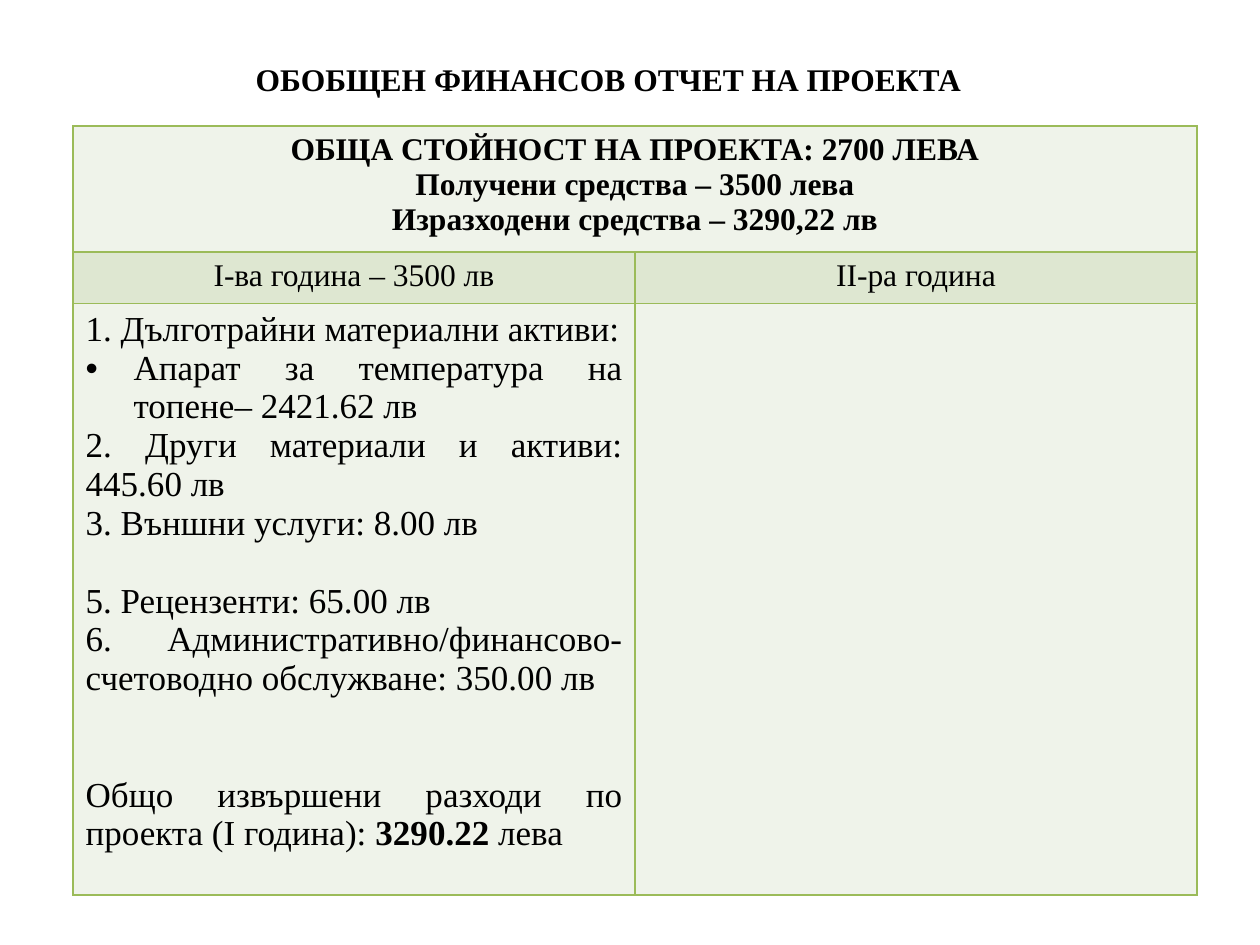
from lxml.etree import SubElement
from pptx import Presentation
from pptx.dml.color import RGBColor
from pptx.enum.text import MSO_ANCHOR, PP_ALIGN
from pptx.oxml.ns import qn
from pptx.util import Inches, Pt

FONT = "Times New Roman"
BLACK, GREEN, PALE, SAGE = "000000", "9BBB59", "EFF3EA", "DEE7D1"
BLANK_LINE = 22.15

TITLE = "ОБОБЩЕН ФИНАНСОВ ОТЧЕТ НА ПРОЕКТА"
TOTALS = [
    "ОБЩА СТОЙНОСТ НА ПРОЕКТА: 2700 ЛЕВА",
    "Получени средства – 3500 лева",
    "Изразходени средства – 3290,22 лв",
]
YEARS = ["I-ва година – 3500 лв", "II-ра година"]
EXPENSES = [
    "1. Дълготрайни материални активи:",
    "Апарат за температура на топене– 2421.62 лв",
    "2. Други материали и активи: 445.60 лв",
    "3. Външни услуги: 8.00 лв",
    "5. Рецензенти: 65.00 лв",
    "6. Административно/финансово-счетоводно обслужване: 350.00 лв",
    "Общо извършени разходи по проекта (I година): ",
]
EQUIPMENT, REVIEWERS, SUM = 1, 4, 6


def color(value):
    return RGBColor.from_string(value)


class ReportPage:
    def __init__(self, deck):
        self.page = deck.slides.add_slide(deck.slide_layouts[6])

    def style(self, span, size, bold=False):
        span.font.name = FONT
        span.font.size = Pt(size)
        span.font.bold = bold
        span.font.color.rgb = color(BLACK)

    def set_lines(self, frame, lines, size, align, bold=False):
        frame.text = "\n".join(lines)
        for para in frame.paragraphs:
            para.alignment = align
            for span in para.runs:
                self.style(span, size, bold)

    def title(self, text, left, top, width, height):
        box = self.page.shapes.add_textbox(
            Inches(left), Inches(top), Inches(width), Inches(height))
        frame = box.text_frame
        frame.word_wrap = True
        frame.vertical_anchor = MSO_ANCHOR.MIDDLE
        self.set_lines(frame, [text], 18, PP_ALIGN.CENTER, bold=True)

    def table(self, left, top, column_widths, row_heights, fills):
        shape = self.page.shapes.add_table(
            len(row_heights), len(column_widths), Inches(left), Inches(top),
            Inches(sum(column_widths)), Inches(sum(row_heights)))
        table = shape.table
        for column, width in zip(table.columns, column_widths):
            column.width = Inches(width)
        for row, height, fill in zip(table.rows, row_heights, fills):
            row.height = Inches(height)
            for cell in row.cells:
                self.border(cell)
                cell.fill.solid()
                cell.fill.fore_color.rgb = color(fill)
        return table

    def border(self, cell):
        properties = cell._tc.get_or_add_tcPr()
        for side in ("a:lnL", "a:lnR", "a:lnT", "a:lnB"):
            line = SubElement(properties, qn(side), w=str(Pt(1)))
            fill = SubElement(line, qn("a:solidFill"))
            SubElement(fill, qn("a:srgbClr"), val=GREEN)

    def bullet(self, para, indent):
        """Give the paragraph a round bullet with a hanging indent."""
        properties = para._p.get_or_add_pPr()
        properties.set("marL", str(Inches(indent)))
        properties.set("indent", str(-Inches(indent)))
        SubElement(properties, qn("a:buFont"), typeface="Arial")
        SubElement(properties, qn("a:buChar"), char="•")


def main():
    deck = Presentation()
    deck.slide_width, deck.slide_height = Inches(10), Inches(7.5)
    report = ReportPage(deck)
    report.title(TITLE, 0.58, 0.25, 8.5, 0.75)

    table = report.table(0.58, 1, [4.46] * 2, [0.93, 0.41, 4.69],
                         [PALE, SAGE, PALE])
    totals = table.cell(0, 0)
    totals.merge(table.cell(0, 1))
    report.set_lines(totals.text_frame, TOTALS, 18, PP_ALIGN.CENTER, bold=True)
    for column, year in enumerate(YEARS):
        report.set_lines(table.cell(1, column).text_frame, [year], 18,
                         PP_ALIGN.CENTER)

    expenses = table.cell(2, 0).text_frame
    report.set_lines(expenses, EXPENSES, 20, PP_ALIGN.JUSTIFY)
    paragraphs = expenses.paragraphs
    report.bullet(paragraphs[EQUIPMENT], 0.38)
    paragraphs[REVIEWERS].space_before = Pt(BLANK_LINE)
    paragraphs[SUM].space_before = Pt(2 * BLANK_LINE)
    for text, bold in (("3290.22 ", True), ("лева", False)):
        span = paragraphs[SUM].add_run()
        span.text = text
        report.style(span, 20, bold)

    deck.save("out.pptx")


if __name__ == "__main__":
    main()
